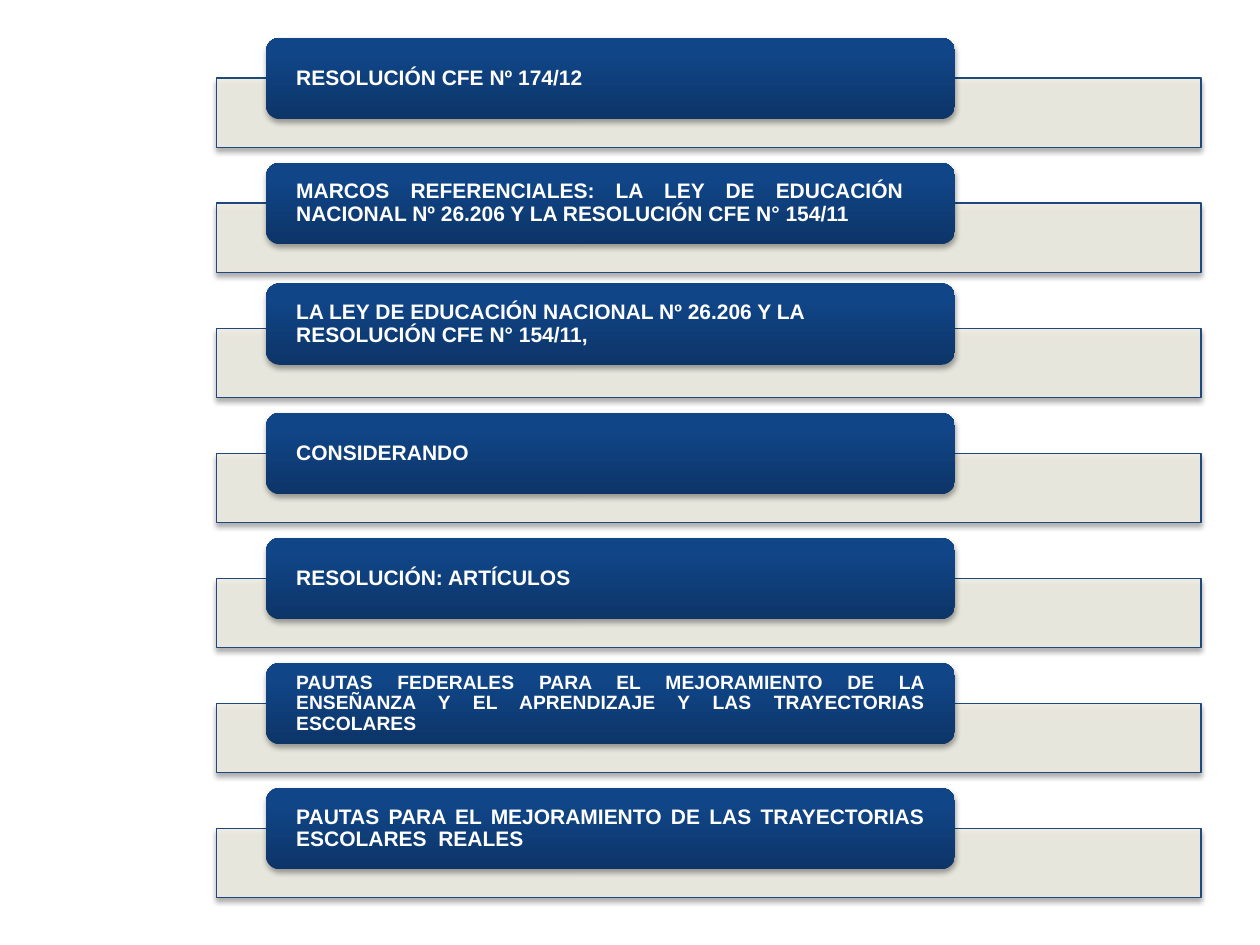
"""Builds a slide that lists the sections of a school resolution."""
from pptx import Presentation
from pptx.dml.color import RGBColor
from pptx.enum.shapes import MSO_SHAPE as Shape
from pptx.enum.text import MSO_ANCHOR as Anchor, PP_ALIGN as Align
from pptx.oxml import parse_xml
from pptx.oxml.ns import nsdecls, qn
from pptx.util import Pt

WHITE = RGBColor(0xFF, 0xFF, 0xFF)
BLACK = RGBColor(0x00, 0x00, 0x00)
CREAM = RGBColor(0xEE, 0xEC, 0xE1)
NAVY = RGBColor(0x1F, 0x49, 0x7D)
GRADIENT = [
    (0, RGBColor(0x0D, 0x35, 0x68)),
    (80, RGBColor(0x10, 0x45, 0x87)),
    (100, RGBColor(0x0E, 0x45, 0x8A)),
]

FIRST_BAR, PITCH, RISE = 44.6, 71.45, 23
SECTIONS = [
    ("RESOLUCIÓN CFE Nº 174/12", {}),
    ("MARCOS REFERENCIALES: LA LEY DE EDUCACIÓN  NACIONAL Nº 26.206 "
     "Y LA RESOLUCIÓN CFE N° 154/11", {"align": Align.JUSTIFY}),
    ("LA LEY DE EDUCACIÓN NACIONAL Nº 26.206 Y LA RESOLUCIÓN CFE N° 154/11,",
     {"rise": 25.5}),
    ("CONSIDERANDO", {}),
    ("RESOLUCIÓN: ARTÍCULOS", {}),
    ("PAUTAS FEDERALES PARA EL MEJORAMIENTO DE LA ENSEÑANZA "
     "Y EL APRENDIZAJE Y LAS TRAYECTORIAS ESCOLARES",
     {"align": Align.JUSTIFY, "size": 11}),
    ("PAUTAS PARA EL MEJORAMIENTO DE LAS TRAYECTORIAS ESCOLARES  REALES",
     {"align": Align.JUSTIFY}),
]


class Deck:
    """Holds the style and the current slide."""

    font = "Arial"

    def __init__(self, width, height):
        self.prs = Presentation()
        self.prs.slide_width, self.prs.slide_height = Pt(width), Pt(height)
        self.s = self.prs.slides.add_slide(self.prs.slide_layouts[6])

    def shape(self, kind, x, y, w, h):
        return self.s.shapes.add_shape(kind, Pt(x), Pt(y), Pt(w), Pt(h))

    def shadow(self, sp):
        sp._element.spPr.append(parse_xml(
            f'<a:effectLst {nsdecls("a")}><a:outerShdw blurRad="{Pt(3.1)}" '
            f'dist="{Pt(1.8)}" dir="5400000" rotWithShape="0">'
            f'<a:srgbClr val="{BLACK}"><a:alpha val="35000"/></a:srgbClr>'
            '</a:outerShdw></a:effectLst>'))

    def bar(self, y):
        sp = self.shape(Shape.RECTANGLE, 123.8, y, 562.5, 39.6)
        sp.fill.solid()
        sp.fill.fore_color.rgb = CREAM
        color = sp._element.spPr.find(f".//{qn('a:srgbClr')}")
        color.append(parse_xml(f'<a:alpha {nsdecls("a")} val="90000"/>'))
        sp.line.color.rgb = NAVY
        sp.line.width = Pt(0.75)
        self.shadow(sp)

    def label(self, y, text, size=12, align=Align.LEFT):
        sp = self.shape(Shape.ROUNDED_RECTANGLE, 152, y, 393.7, 46.5)
        stops = "".join(f'<a:gs pos="{pos * 1000}"><a:srgbClr val="{rgb}"/></a:gs>'
                        for pos, rgb in GRADIENT)
        sp._element.spPr.find(qn("a:prstGeom")).addnext(parse_xml(
            f'<a:gradFill {nsdecls("a")} rotWithShape="1"><a:gsLst>{stops}</a:gsLst>'
            '<a:lin ang="16200000" scaled="0"/></a:gradFill>'))
        sp.line.fill.background()
        self.shadow(sp)
        tf = sp.text_frame
        tf.word_wrap = True
        tf.vertical_anchor = Anchor.MIDDLE
        tf.margin_left = tf.margin_right = Pt(15)
        tf.margin_top = tf.margin_bottom = Pt(0)
        p = tf.paragraphs[0]
        p.alignment, p.line_spacing = align, 0.9
        r = p.add_run()
        r.text = text
        r.font.name, r.font.size, r.font.bold = self.font, Pt(size), True
        r.font.color.rgb = WHITE

    def section(self, y, text, rise=RISE, **style):
        self.bar(y)
        self.label(y - rise, text, **style)


def main():
    deck = Deck(720, 540)
    for i, (text, style) in enumerate(SECTIONS):
        deck.section(FIRST_BAR + i * PITCH, text, **style)
    deck.prs.save("out.pptx")


if __name__ == "__main__":
    main()
